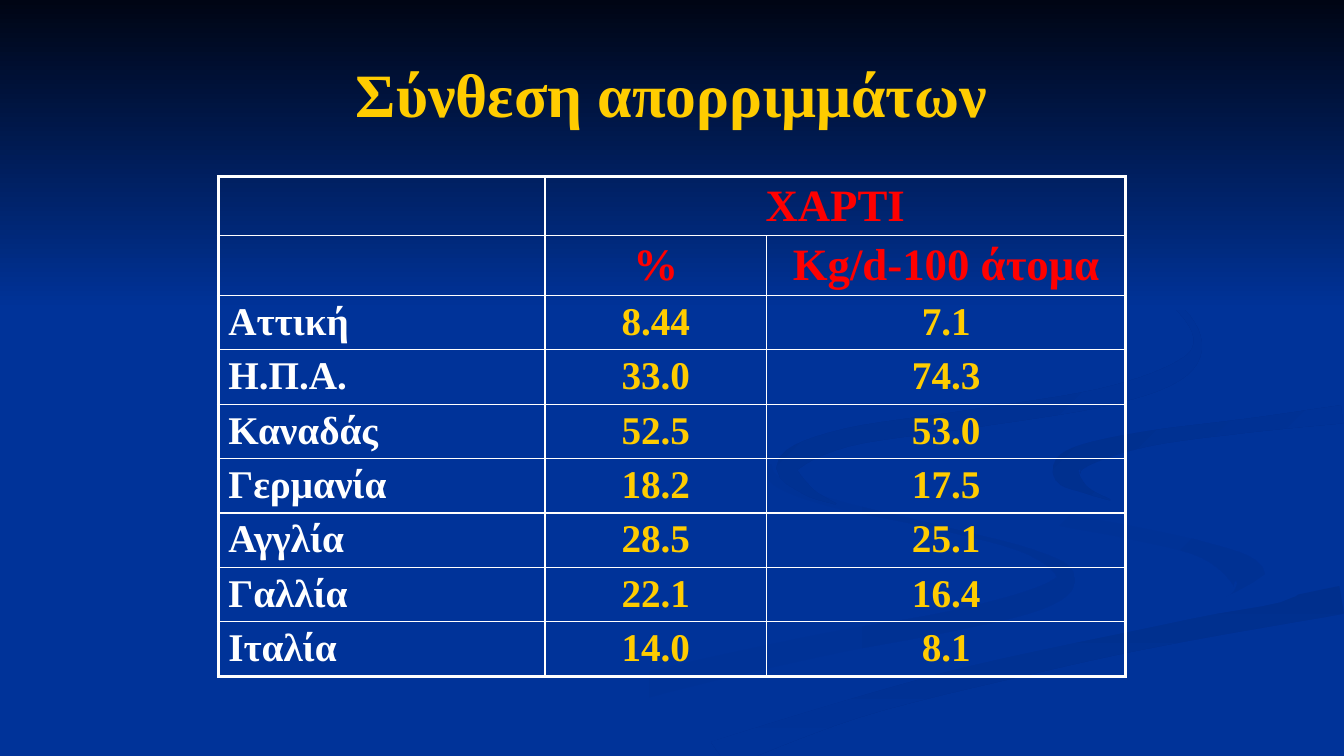
"""Build the slide comparing paper in household waste by country."""
import math
from lxml import etree
from pptx import Presentation, util as u
from pptx.dml.color import RGBColor
from pptx.enum import shapes, text
from pptx.oxml.ns import qn

BLUE = RGBColor(0x00, 0x33, 0x99)
DIM_BLUE = RGBColor(0x00, 0x31, 0x93)
DARK_BLUE = RGBColor(0x00, 0x2F, 0x8D)
NIGHT = RGBColor(0x00, 0x05, 0x14)
GOLD = RGBColor(0xFF, 0xCC, 0x00)
RED = RGBColor(0xFF, 0x00, 0x00)
WHITE = RGBColor(0xFF, 0xFF, 0xFF)
FONT = "Times New Roman"
THIN, THICK = u.Pt(1), u.Pt(2.25)
WIDE, HIGH = 13.33, 7.5
STEPS = 6
UNITS = 1000
ACROSS, DIAGONAL, DOWN = 0, 315, 270

deck = Presentation()
deck.slide_width, deck.slide_height = u.Inches(WIDE), u.Inches(HIGH)
slide = deck.slides.add_slide(deck.slide_layouts[6])
slide.background.fill.solid()
slide.background.fill.fore_color.rgb = BLUE


def ribbon_outline(stations):
    """Smooth (x, y, breadth) stations into a centre line and return both its edges."""
    padded = [stations[0], *stations, stations[-1]]
    centre = []
    for a, b, c, d in zip(padded, padded[1:], padded[2:], padded[3:]):
        for step in range(STEPS):
            t = step / STEPS
            centre.append([q + t * (r - p) / 2 + t**2 * (p - 2.5 * q + 2 * r - s / 2)
                           + t**3 * (1.5 * (q - r) + (s - p) / 2)
                           for p, q, r, s in zip(a, b, c, d)])
    centre.append(stations[-1])
    edges = [], []
    for before, (x, y, breadth), after in zip(centre[:1] + centre, centre, centre[1:] + centre[-1:]):
        run, rise = after[0] - before[0], after[1] - before[1]
        reach = breadth / 2 / math.hypot(run, rise)
        for edge, side in zip(edges, (1, -1)):
            edge.append((min(x - side * rise * reach, WIDE) * UNITS,
                         min(y + side * run * reach, HIGH) * UNITS))
    return edges[0] + edges[1][::-1]


def write(frame, words, size, color, align):
    paragraph = frame.paragraphs[0]
    paragraph.alignment = align
    run = paragraph.add_run()
    run.text = words
    run.font.name, run.font.size, run.font.bold = FONT, u.Pt(size), True
    run.font.color.rgb = color


left_swirl = [(7.64, 4.6, 0.02), (7.7, 4.77, 0.1), (8.25, 4.99, 0.08), (9.3, 5.23, 0.04),
              (10.2, 5.47, 0.06), (10.57, 5.72, 0.18), (10.3, 5.94, 0.22), (9.4, 6.17, 0.2),
              (8.1, 6.41, 0.22), (6.4, 6.8, 0.25), (5.1, 7.2, 0.3), (4.4, 7.49, 0.4)]
right_curl = [(9.65, 4.64, 0.01), (9.73, 4.82, 0.06), (10.3, 5.1, 0.12), (11.2, 5.28, 0.13),
              (11.95, 5.46, 0.16), (12.38, 5.72, 0.34), (12.28, 5.93, 0.15), (11.91, 6.05, 0.01)]
dark_sweep = [(7.1, 7.5, 0.3), (8.5, 7.02, 0.2), (10.1, 6.6, 0.23),
              (11.5, 6.3, 0.22), (13.31, 5.95, 0.28)]
main_band = [(13.32, 3.95, 0.15), (12.4, 4.08, 0.12), (11, 4.23, 0.12), (10.1, 4.6, 0.6),
             (10.9, 5.03, 0.2), (12.2, 5.29, 0.2), (12.8, 5.7, 0.4), (11.8, 6.1, 0.08),
             (9.6, 6.56, 0.1), (8, 7, 0.12), (6.6, 7.45, 0.1)]
right_hook = [(13.31, 4.11, 0.18), (12.4, 4.22, 0.14), (11.4, 4.35, 0.15), (10.75, 4.52, 0.22),
              (10.58, 4.68, 0.28), (10.75, 4.85, 0.08), (11.01, 4.96, 0.01)]
upper_curl = [(10.17, 2.33, 0.01), (11, 2.64, 0.05), (11.65, 3.02, 0.06), (11.88, 3.4, 0.08),
              (11.65, 3.7, 0.18), (10.9, 3.95, 0.18), (9.6, 4.16, 0.18), (8.4, 4.34, 0.18),
              (7.82, 4.6, 0.22), (8, 4.86, 0.1), (8.29, 5, 0.01)]

backdrop = []
for stations, start, end, angle in (
        (left_swirl, BLUE, DIM_BLUE, ACROSS), (right_curl, BLUE, DIM_BLUE, DIAGONAL),
        (dark_sweep, DARK_BLUE, BLUE, DOWN), (main_band, BLUE, BLUE, ACROSS),
        (right_hook, DARK_BLUE, BLUE, DIAGONAL), (upper_curl, DARK_BLUE, BLUE, DIAGONAL)):
    outline = ribbon_outline(stations)
    pen = slide.shapes.build_freeform(*outline[0], scale=u.Inches(1) / UNITS)
    pen.add_line_segments(outline[1:], close=True)
    backdrop.append((pen.convert_to_shape(), start, end, angle))

night_sky = slide.shapes.add_shape(shapes.MSO_SHAPE.RECTANGLE, 0, 0,
                                   deck.slide_width, u.Inches(0.41 * HIGH))
backdrop.append((night_sky, NIGHT, BLUE, DOWN))

for part, start, end, angle in backdrop:
    part.shadow.inherit = False
    part.line.fill.background()
    if start == end:
        part.fill.solid()
        part.fill.fore_color.rgb = start
        continue
    part.fill.gradient()
    part.fill.gradient_angle = angle
    for stop, color in zip(part.fill.gradient_stops, (start, end)):
        stop.color.rgb = color

title = slide.shapes.add_textbox(u.Inches(0.05 * WIDE), u.Inches(0.04 * HIGH),
                                 u.Inches(0.9 * WIDE), u.Inches(1.25)).text_frame
title.word_wrap = True
title.vertical_anchor = text.MSO_ANCHOR.MIDDLE
write(title, "Σύνθεση απορριμμάτων", 44, GOLD, text.PP_ALIGN.CENTER)

waste = [
    ("", "ΧΑΡΤΙ", ""),
    ("", "%", "Kg/d-100 άτομα"),
    ("Αττική", "8.44", "7.1"),
    ("Η.Π.Α.", "33.0", "74.3"),
    ("Καναδάς", "52.5", "53.0"),
    ("Γερμανία", "18.2", "17.5"),
    ("Αγγλία", "28.5", "25.1"),
    ("Γαλλία", "22.1", "16.4"),
    ("Ιταλία", "14.0", "8.1")]
HEADER_ROWS = 2
widths = (3.24, 2.2, 3.56)
heights = [0.59] * HEADER_ROWS + [0.54] * (len(waste) - HEADER_ROWS)
last_row, last_col = len(waste) - 1, len(widths) - 1

table = slide.shapes.add_table(len(waste), len(widths), u.Inches((WIDE - sum(widths)) / 2),
                               u.Inches(1.75), u.Inches(sum(widths)), u.Inches(sum(heights))).table
table.first_row = table.horz_banding = False
for column, width in zip(table.columns, widths):
    column.width = u.Inches(width)
for row, height in zip(table.rows, heights):
    row.height = u.Inches(height)
paper_heading = table.cell(0, 1)
paper_heading.merge(table.cell(0, last_col))

for r, entries in enumerate(waste):
    for c, entry in enumerate(entries):
        cell = table.cell(r, c)
        cell.margin_bottom = 0
        is_header = r < HEADER_ROWS
        size = 32 if is_header else 28
        color = RED if is_header else GOLD if c else WHITE
        if entry:
            align = text.PP_ALIGN.CENTER if c else text.PP_ALIGN.LEFT
            write(cell.text_frame, entry, size, color, align)
        else:
            cell.text_frame.paragraphs[0].font.size = u.Pt(size)
        on_frame = {"a:lnL": c == 0, "a:lnR": c == last_col or cell.is_merge_origin,
                    "a:lnT": r == 0, "a:lnB": r == last_row}
        for tag, outer in on_frame.items():
            border = etree.SubElement(cell._tc.get_or_add_tcPr(), qn(tag), w=str(THICK if outer else THIN))
            paint = etree.SubElement(border, qn("a:solidFill"))
            etree.SubElement(paint, qn("a:srgbClr"), val=str(WHITE))
        cell.fill.background()

deck.save("out.pptx")
